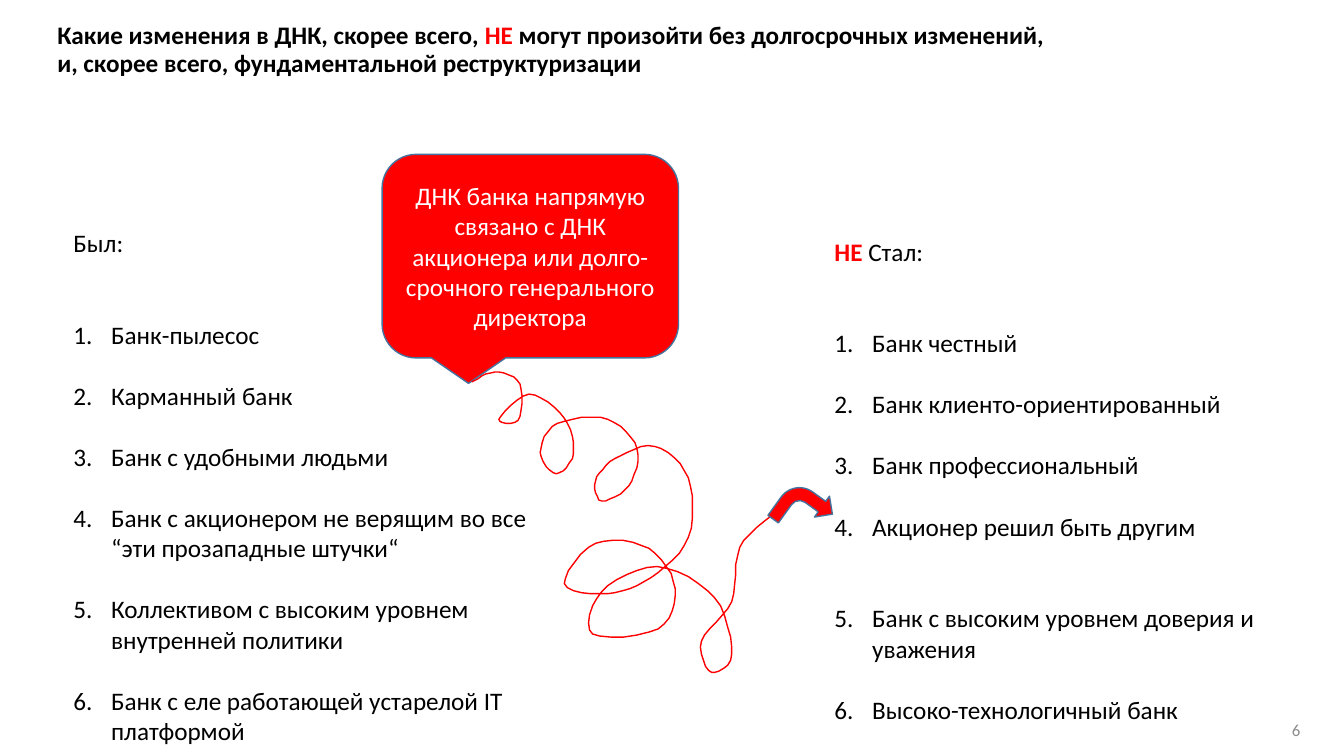
from pptx import Presentation
from pptx.dml.color import RGBColor
from pptx.enum.shapes import MSO_SHAPE as Preset
from pptx.enum.text import MSO_ANCHOR as Anchor, MSO_AUTO_SIZE as AutoSize, PP_ALIGN as Align
from pptx.oxml.ns import qn
from pptx.util import Cm, Pt
from lxml.etree import SubElement

COLORS = {"black": "000000", "red": "FF0000", "white": "FFFFFF", "gray": "8C8C8C", "blue": "43739E"}
LINE = 22
INDENT = Cm(0.95)

TITLE = [
    [("Какие изменения в ДНК, скорее всего, ", "black"), ("НЕ", "red"),
     (" могут произойти без долгосрочных изменений, ", "black")],
    [("и, скорее всего, фундаментальной реструктуризации", "black")],
]
BEFORE = [
    ("Банк-пылесос", 2),
    ("Карманный банк", 1),
    ("Банк с удобными людьми", 1),
    ("Банк с акционером не верящим во все “эти прозападные штучки“", 1),
    ("Коллективом с высоким уровнем внутренней политики", 1),
    ("Банк с еле работающей устарелой IT платформой", 1),
]
AFTER = [
    ("Банк честный", 2),
    ("Банк клиенто-ориентированный", 1),
    ("Банк профессиональный", 1),
    ("Акционер решил быть другим", 1),
    ("Банк с высоким уровнем доверия и уважения", 2),
    ("Высоко-технологичный банк", 1),
]
CALLOUT = "ДНК банка напрямую связано с ДНК акционера или долго-срочного генерального директора"

SQUIGGLE_UNIT = Cm(0.0254)
SQUIGGLE_STEPS = 6
SQUIGGLE_KNOTS = [
    (468, 379), (491, 369), (516, 381), (514, 417), (495, 416), (525, 391), (560, 415),
    (569, 450), (552, 470), (536, 449), (553, 420), (603, 416), (632, 445), (624, 482),
    (597, 497), (591, 477), (610, 455), (650, 443), (683, 474), (683, 533), (646, 573),
    (603, 589), (560, 579), (591, 539), (644, 544), (670, 584), (653, 624), (588, 629),
    (597, 587), (652, 562), (709, 593), (726, 649), (706, 667), (696, 636), (726, 597),
    (734, 543), (765, 512),
]


def rgb(name):
    return RGBColor.from_string(COLORS[name])


def format_frame(frame, **values):
    for name, value in dict(word_wrap=True, **values).items():
        setattr(frame, name, value)


def add_span(para, text, color="black", size=18, bold=False):
    span = para.add_run()
    span.text = text
    for name, value in {"name": "Calibri", "size": Pt(size), "bold": bold}.items():
        setattr(span.font, name, value)
    span.font.color.rgb = rgb(color)


def number_para(para):
    properties = para._p.get_or_add_pPr()
    properties.set("marL", str(INDENT))
    properties.set("indent", str(-INDENT))
    SubElement(properties, qn("a:buFont"), typeface="+mj-lt")
    SubElement(properties, qn("a:buAutoNum"), type="arabicPeriod")


def fill_title(box):
    for name, value in zip(("left", "top", "width", "height"), (1.19, 0.89, 32.33, 2.13)):
        setattr(box, name, Cm(value))
    format_frame(box.text_frame, vertical_anchor=Anchor.MIDDLE, auto_size=AutoSize.NONE,
                 margin_bottom=Cm(1.5))
    para = box.text_frame.paragraphs[0]
    para.alignment = Align.LEFT
    para.line_spacing = 0.9
    for index, line in enumerate(TITLE):
        if index:
            para.add_line_break()
        for text, color in line:
            add_span(para, text, color, bold=True)


def add_list(page, place, heading, items):
    box = page.shapes.add_textbox(*map(Cm, place))
    format_frame(box.text_frame, auto_size=AutoSize.SHAPE_TO_FIT_TEXT)
    for text, color, bold in heading:
        add_span(box.text_frame.paragraphs[0], text, color, bold=bold)
    for text, gap in items:
        para = box.text_frame.add_paragraph()
        para.space_before = Pt(gap * LINE)
        number_para(para)
        add_span(para, text)


def add_page_number(page, text):
    box = page.shapes.add_textbox(Cm(25.4), Cm(17.88), Cm(7.62), Cm(1.02))
    format_frame(box.text_frame, vertical_anchor=Anchor.MIDDLE)
    para = box.text_frame.paragraphs[0]
    para.alignment = Align.RIGHT
    add_span(para, text, "gray", 12)


def add_red_shape(page, preset, place, rotation=0):
    shape = page.shapes.add_shape(preset, *map(Cm, place))
    shape.rotation = rotation
    shape.shadow.inherit = False
    shape.fill.solid()
    shape.fill.fore_color.rgb = rgb("red")
    shape.line.color.rgb = rgb("blue")
    shape.line.width = Pt(1)
    return shape


def add_callout(page):
    shape = add_red_shape(page, Preset.ROUNDED_RECTANGULAR_CALLOUT, (9.63, 3.89, 7.47, 5.13))
    format_frame(shape.text_frame, vertical_anchor=Anchor.MIDDLE)
    para = shape.text_frame.paragraphs[0]
    para.alignment = Align.CENTER
    add_span(para, CALLOUT, "white")


def blend(before, start, end, after, t):
    return (start + (end - before) * t / 2
            + (2 * before - 5 * start + 4 * end - after) * t ** 2 / 2
            + (3 * (start - end) + after - before) * t ** 3 / 2)


def smooth_points(knots):
    padded = knots[:1] + knots + knots[-1:]
    for group in zip(padded, padded[1:], padded[2:], padded[3:]):
        for step in range(1, SQUIGGLE_STEPS + 1):
            yield tuple(blend(*axis, step / SQUIGGLE_STEPS) for axis in zip(*group))


def add_squiggle(page):
    builder = page.shapes.build_freeform(*SQUIGGLE_KNOTS[0], scale=SQUIGGLE_UNIT)
    builder.add_line_segments(list(smooth_points(SQUIGGLE_KNOTS)), close=False)
    shape = builder.convert_to_shape()
    shape.shadow.inherit = False
    shape.fill.background()
    shape.line.color.rgb = rgb("red")
    shape.line.width = Pt(1)


def main():
    deck = Presentation()
    deck.slide_width, deck.slide_height = Cm(33.87), Cm(19.05)
    page = deck.slides.add_slide(deck.slide_layouts[5])
    fill_title(page.shapes.title)
    add_page_number(page, "6")
    add_list(page, (1.6, 5.61, 12.57, 14.1), [("Был:", "black", False)], BEFORE)
    add_list(page, (20.78, 5.82, 12.57, 12.57),
             [("НЕ", "red", True), (" Стал:", "black", False)], AFTER)
    add_callout(page)
    add_squiggle(page)
    add_red_shape(page, Preset.BENT_ARROW, (19.61, 12.19, 1.3, 1.3), 35.8)
    deck.save("out.pptx")


if __name__ == "__main__":
    main()
